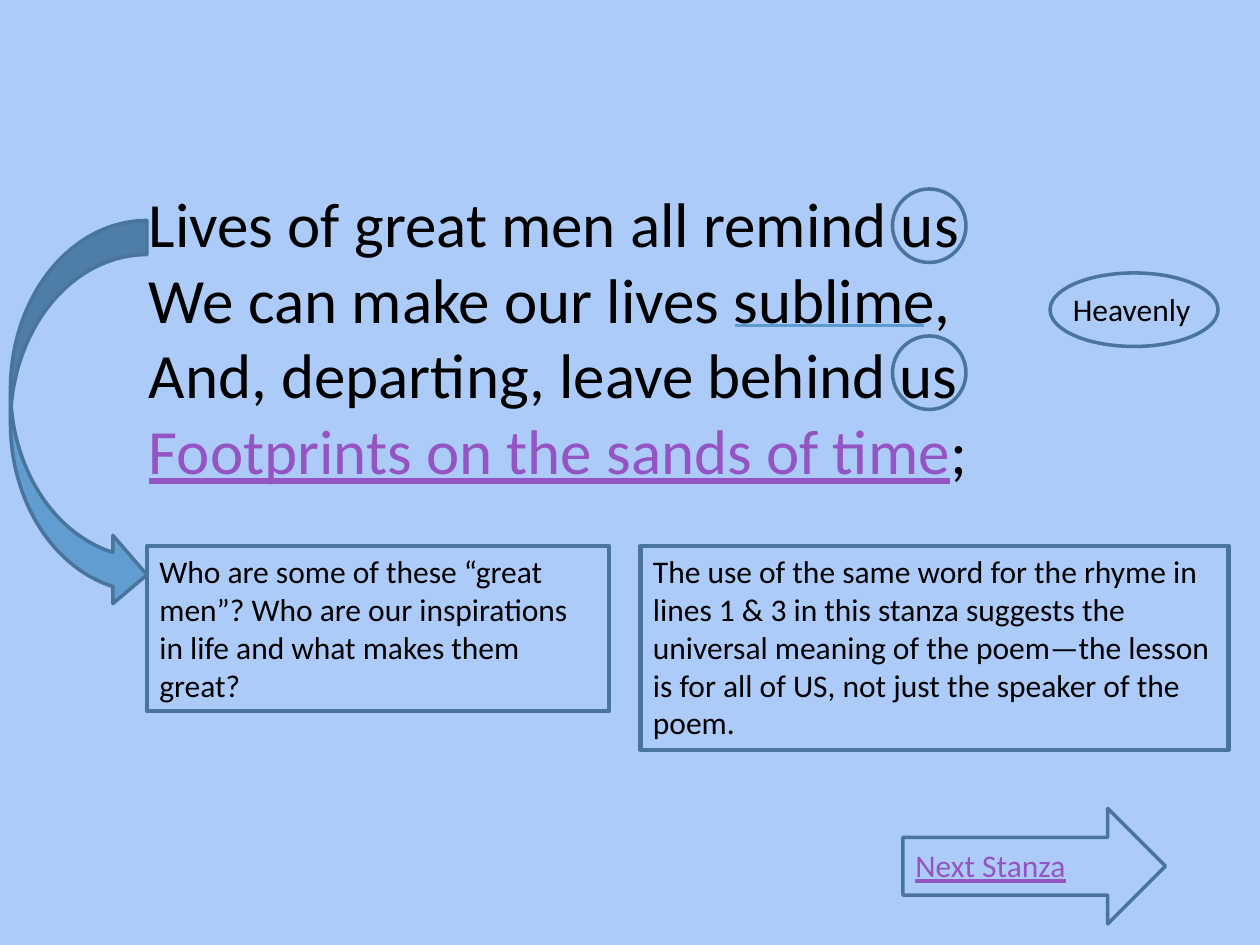
import pptx
import pptx.dml.color
import pptx.enum.shapes
import pptx.enum.text
import pptx.util
from lxml import etree

Pt = pptx.util.Pt
RGB = pptx.dml.color.RGBColor
SHAPE = pptx.enum.shapes.MSO_SHAPE

THEME = {
    "font": "Calibri", "poem_size": 36, "note_size": 18,
    "background": "ACCBF9", "text": "000000", "link": "9454C3",
    "outline": "49749B", "underline": "5D9ACF", "arrow": "629DD1",
    "thin": 2, "thick": 2.5,
}

# Each line is a list of (text, is_linked) parts.
POEM = [
    [("Lives of great men all remind us", False)],
    [("We can make our lives sublime,", False)],
    [("And, departing, leave behind us", False)],
    [("Footprints on the sands of time", True), (";", False)],
]
GLOSS = [[("Heavenly", False)]]
RHYME_NOTE = [[(
    "The use of the same word for the rhyme in lines 1 & 3 in this stanza "
    "suggests the universal meaning of the poem—the lesson is for all of US, "
    "not just the speaker of the poem.", False)]]
QUESTION = [[(
    "Who are some of these “great men”? Who are our inspirations in life "
    "and what makes them great?", False)]]
NEXT = [[("Next Stanza", True)]]

# Left, top, width, height in points
POEM_BOX = (78, 102, 642, 181.5)
GLOSS_BOX = (606, 162, 90, 29)
GLOSS_OVAL = (600, 156, 96, 42)
RHYME_LEFT, RHYME_TOPS, RHYME_SIZE = 510, (108, 192), 42
NOTE_TOP = 312
RHYME_BOX = (366, NOTE_TOP, 336, 116.5)
QUESTION_BOX = (84, NOTE_TOP, 264, 94.5)
CURVED_ARROW = (6, 126, 78, 222)
NEXT_ARROW = (516, 462, 150, 66)
NEXT_BOX = (516, 480, 132, 29)
UNDERLINE = (420, 186, 528, 186)


def points(values):
    return [Pt(value) for value in values]


def write(shape, lines, size=THEME["note_size"], font=THEME["font"]):
    frame = shape.text_frame
    frame.word_wrap = True
    frame.auto_size = pptx.enum.text.MSO_AUTO_SIZE.SHAPE_TO_FIT_TEXT
    frame.vertical_anchor = pptx.enum.text.MSO_ANCHOR.TOP
    for index, parts in enumerate(lines):
        line = frame.add_paragraph() if index else frame.paragraphs[0]
        line.alignment = pptx.enum.text.PP_ALIGN.LEFT
        for text, linked in parts:
            run = line.add_run()
            run.text = text
            run.font.name = font
            run.font.size = Pt(size)
            run.font.underline = linked
            run.font.color.rgb = RGB.from_string(THEME["link" if linked else "text"])


def add_text(shapes, box, lines, **style):
    write(shapes.add_textbox(*points(box)), lines, **style)


def add_outline(shapes, kind, box, width=THEME["thin"], fill=None):
    shape = shapes.add_shape(kind, *points(box))
    shape.shadow.inherit = False
    if fill:
        shape.fill.solid()
        shape.fill.fore_color.rgb = RGB.from_string(fill)
    else:
        shape.fill.background()
    shape.line.color.rgb = RGB.from_string(THEME["outline"])
    shape.line.width = Pt(width)
    return shape


def add_underline(shapes, ends):
    underline = shapes.add_connector(
        pptx.enum.shapes.MSO_CONNECTOR.STRAIGHT, *points(ends))
    underline.line.color.rgb = RGB.from_string(THEME["underline"])
    underline.line.width = Pt(THEME["thin"])
    etree.SubElement(underline.element.spPr, pptx.oxml.ns.qn("a:effectLst"))


def main():
    deck = pptx.Presentation()
    deck.slide_width, deck.slide_height = points((720, 540))
    slide = deck.slides.add_slide(deck.slide_layouts[6])
    slide.background.fill.solid()
    slide.background.fill.fore_color.rgb = RGB.from_string(THEME["background"])
    shapes = slide.shapes

    add_text(shapes, POEM_BOX, POEM, size=THEME["poem_size"])

    gloss = shapes.add_group_shape().shapes
    add_text(gloss, GLOSS_BOX, GLOSS)
    add_outline(gloss, SHAPE.OVAL, GLOSS_OVAL)
    add_underline(shapes, UNDERLINE)

    rhyme = shapes.add_group_shape().shapes
    for top in RHYME_TOPS:
        add_outline(rhyme, SHAPE.OVAL, (RHYME_LEFT, top, RHYME_SIZE, RHYME_SIZE))
    for owner, box, note in ((rhyme, RHYME_BOX, RHYME_NOTE),
                             (shapes, QUESTION_BOX, QUESTION)):
        write(add_outline(owner, SHAPE.RECTANGLE, box, width=THEME["thick"]), note)

    add_outline(shapes, SHAPE.CURVED_RIGHT_ARROW, CURVED_ARROW, fill=THEME["arrow"])
    add_outline(shapes, SHAPE.RIGHT_ARROW, NEXT_ARROW)
    add_text(shapes, NEXT_BOX, NEXT)

    deck.save("out.pptx")


if __name__ == "__main__":
    main()
